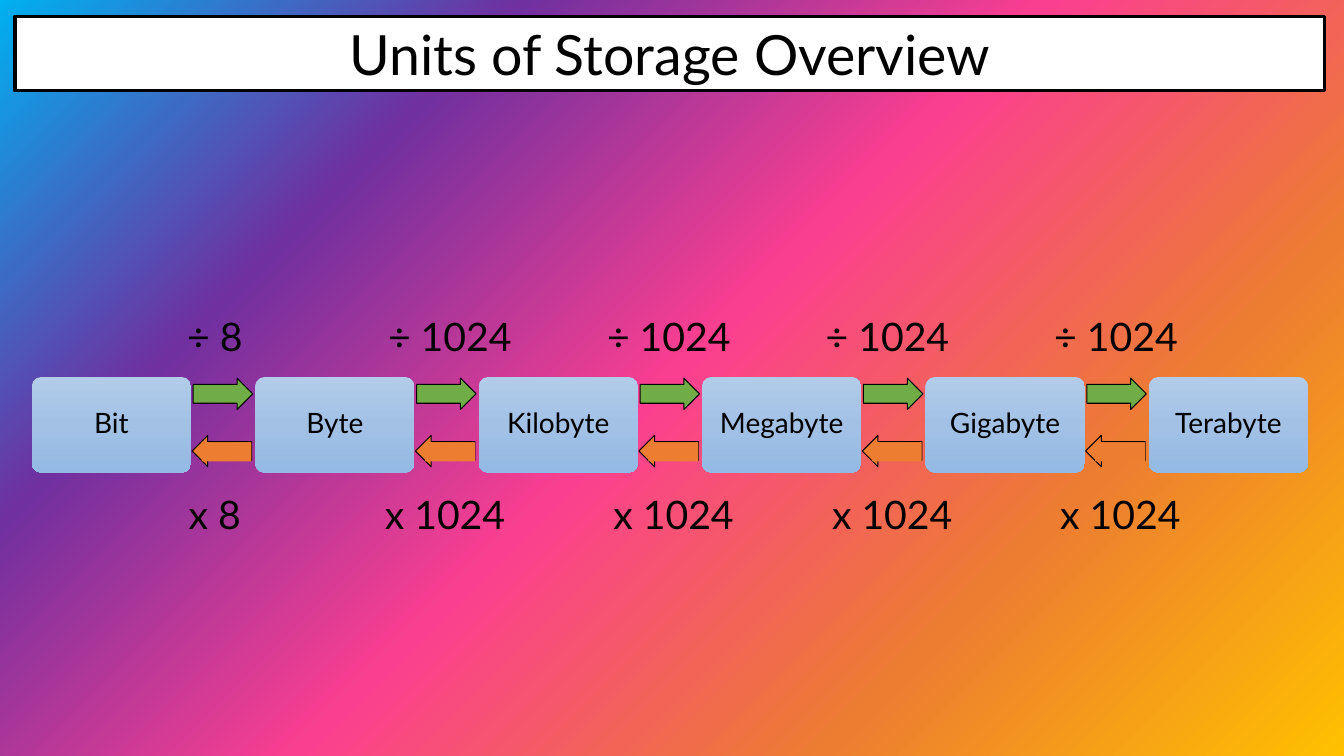
from dataclasses import dataclass

from lxml import etree
from pptx import Presentation
from pptx import util as u
from pptx.dml.color import RGBColor
from pptx.dml.fill import FillFormat
from pptx.enum import shapes, text
from pptx.oxml import ns
from pptx.shapes.autoshape import Shape
from pptx.slide import Slide
from pptx.text.text import TextFrame

FONT = "Lato"
BLACK = RGBColor(0x00, 0x00, 0x00)
WHITE = RGBColor(0xFF, 0xFF, 0xFF)
GREEN = RGBColor(0x70, 0xAD, 0x47)
ORANGE = RGBColor(0xED, 0x7D, 0x31)
BACKDROP = [RGBColor(0xFF, 0xC0, 0x00), ORANGE, RGBColor(0xFB, 0x3F, 0x90),
            RGBColor(0x70, 0x30, 0xA0), RGBColor(0x00, 0xB0, 0xF0)]
UNIT_BLUES = [RGBColor(0xB1, 0xCB, 0xE9), RGBColor(0xA3, 0xC1, 0xE5),
              RGBColor(0x93, 0xB9, 0xE4)]

# Distances in centimetres
UNIT_LEFT, UNIT_PITCH = 0.8, 5.63


@dataclass
class Block:
    """A shape placed by its offset from the left edge of its unit."""
    kind: shapes.MSO_SHAPE
    offset: float
    top: float
    width: float
    height: float
    fill: RGBColor | None = None
    line: float = 0
    adjustments: tuple[float, ...] = ()
    rotation: float = 0


@dataclass
class Conversion:
    factor: str
    width: float
    divide_left: float
    multiply_left: float


KIND = shapes.MSO_SHAPE
TITLE = Block(KIND.RECTANGLE, 0.38, 0.41, 33, 1.88, WHITE, 2.25)
UNIT = Block(KIND.ROUNDED_RECTANGLE, 0, 9.5, 4.02, 2.41, adjustments=(0.1,))
ARROWS = [
    Block(KIND.RIGHT_ARROW, 4.07, 9.53, 1.5, 0.79, GREEN, 0.75, (0.6, 0.5)),
    Block(KIND.RIGHT_ARROW, 4.04, 10.97, 1.5, 0.79, ORANGE, 0.75, (0.6, 0.5), 180),
    Block(KIND.RECTANGLE, 4.28, 11.15, 1.26, 0.48, ORANGE),  # shaft of the back arrow
]
UNITS = ["Bit", "Byte", "Kilobyte", "Megabyte", "Gigabyte", "Terabyte"]
CONVERSIONS = [
    Conversion("8", 2.18, 4.45, 4.45),
    Conversion("1024", 3.73, 9.47, 9.35),
    Conversion("1024", 3.73, 14.99, 15.11),
    Conversion("1024", 3.73, 20.5, 20.62),
    Conversion("1024", 3.73, 26.26, 26.37),
]


def set_gradient(fill: FillFormat, owner: etree._Element,
                 colors: list[RGBColor]) -> etree._Element:
    """Fill with evenly spaced stops and return the gradient element."""
    fill.gradient()
    gradient = owner.find(".//" + ns.qn("a:gradFill"))
    stops = gradient.find(ns.qn("a:gsLst"))
    stops[:] = []
    for index, color in enumerate(colors):
        position = round(100000 * index / (len(colors) - 1))
        stop = etree.SubElement(stops, ns.qn("a:gs"), pos=str(position))
        etree.SubElement(stop, ns.qn("a:srgbClr"), val=str(color))
    return gradient


def paint_background(slide: Slide) -> None:
    gradient = set_gradient(slide.background.fill, slide.element, BACKDROP)
    gradient.remove(gradient.find(ns.qn("a:lin")))
    circle = etree.SubElement(gradient, ns.qn("a:path"), path="circle")
    etree.SubElement(circle, ns.qn("a:fillToRect"), l="100000", t="100000")
    etree.SubElement(gradient, ns.qn("a:tileRect"), r="-100000", b="-100000")


def write(frame: TextFrame, words: str, size: float) -> None:
    frame.text = words
    frame.vertical_anchor = text.MSO_ANCHOR.MIDDLE
    para = frame.paragraphs[0]
    para.alignment = text.PP_ALIGN.CENTER
    span = para.runs[0]
    span.font.name = FONT
    span.font.size = u.Pt(size)
    span.font.color.rgb = BLACK


def add_block(slide: Slide, block: Block, start: float = 0) -> Shape:
    box = slide.shapes.add_shape(block.kind, u.Cm(start + block.offset), u.Cm(block.top),
                                 u.Cm(block.width), u.Cm(block.height))
    box.shadow.inherit = False
    box.rotation = block.rotation
    for index, value in enumerate(block.adjustments):
        box.adjustments[index] = value
    if block.fill is not None:
        box.fill.solid()
        box.fill.fore_color.rgb = block.fill
    if block.line:
        box.line.color.rgb = BLACK
        box.line.width = u.Pt(block.line)
    else:
        box.line.fill.background()
    return box


def add_unit(slide: Slide, name: str, start: float) -> None:
    box = add_block(slide, UNIT, start)
    set_gradient(box.fill, box.element, UNIT_BLUES)
    box.fill.gradient_angle = 270
    frame = box.text_frame
    frame.margin_left = frame.margin_right = u.Cm(0.2)
    write(frame, name, 20)
    frame.paragraphs[0].line_spacing = 0.9


def add_label(slide: Slide, words: str, left: float, top: float, width: float) -> None:
    box = slide.shapes.add_textbox(u.Cm(left), u.Cm(top), u.Cm(width), u.Cm(1.45))
    frame = box.text_frame
    frame.word_wrap = False
    frame.auto_size = text.MSO_AUTO_SIZE.SHAPE_TO_FIT_TEXT
    write(frame, words, 28)
    frame.vertical_anchor = text.MSO_ANCHOR.TOP


def main() -> None:
    deck = Presentation()
    deck.slide_width, deck.slide_height = u.Cm(33.87), u.Cm(19.05)
    page = deck.slides.add_slide(deck.slide_layouts[6])
    paint_background(page)

    # Title bar
    write(add_block(page, TITLE).text_frame, "Units of Storage Overview", 39.6)

    # Chain of units, with arrows both ways between neighbours
    for index, name in enumerate(UNITS):
        start = UNIT_LEFT + index * UNIT_PITCH
        add_unit(page, name, start)
        if index < len(UNITS) - 1:
            for arrow in ARROWS:
                add_block(page, arrow, start)

    # Factors above and below the arrows
    for step in CONVERSIONS:
        add_label(page, f"÷ {step.factor} ", step.divide_left, 7.75, step.width)
        add_label(page, f"x {step.factor} ", step.multiply_left, 12.22, step.width)

    deck.save("out.pptx")


if __name__ == "__main__":
    main()
